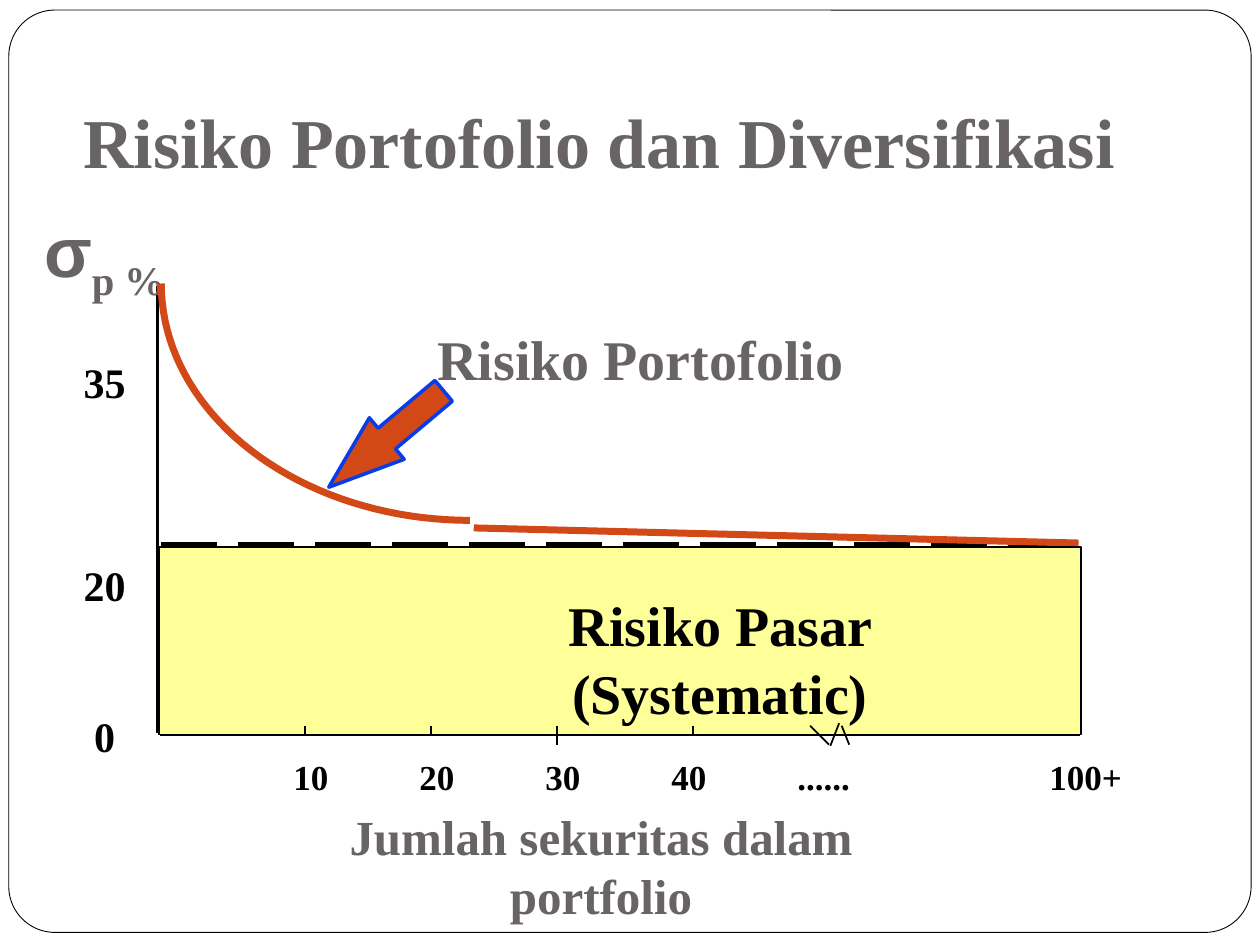
"""Build a slide on portfolio risk and diversification."""
import math

import pptx
import pptx.dml.color
import pptx.enum.dml
import pptx.enum.shapes
import pptx.enum.text
import pptx.oxml.ns
import pptx.util
from lxml import etree

Inches = pptx.util.Inches
Pt = pptx.util.Pt
RGB = pptx.dml.color.RGBColor.from_string
SHAPE = pptx.enum.shapes.MSO_SHAPE
ALIGN = pptx.enum.text.PP_ALIGN
qn = pptx.oxml.ns.qn


class Theme:
    black = RGB("000000")
    white = RGB("FFFFFF")
    gray = RGB("696464")
    orange = RGB("D34817")
    blue = RGB("063DE8")
    yellow = RGB("FFFF99")
    serif = "Times New Roman"
    sans = "Arial"
    title, heading, caption, scale, ticks = 40, 32, 28, 24, 20


def add_text(text, x, y, w, h, size, color=Theme.black, font=Theme.serif,
             align=ALIGN.CENTER, wrap=True):
    tf = s.shapes.add_textbox(Inches(x), Inches(y), Inches(w), Inches(h)).text_frame
    tf.word_wrap = wrap
    p = tf.paragraphs[0]
    p.alignment = align
    r = p.add_run()
    r.text = text
    r.font.name, r.font.size, r.font.bold = font, Pt(size), True
    r.font.color.rgb = color
    return p


def add_line(x1, y1, x2, y2, width, color=Theme.black):
    sp = s.shapes.add_connector(pptx.enum.shapes.MSO_CONNECTOR.STRAIGHT,
                                Inches(x1), Inches(y1), Inches(x2), Inches(y2))
    sp.line.color.rgb = color
    sp.line.width = Pt(width)
    etree.SubElement(sp._element.spPr, qn("a:effectLst"))
    return sp


prs = pptx.Presentation()
prs.slide_width, prs.slide_height = Inches(10), Inches(7.5)
s = prs.slides.add_slide(prs.slide_layouts[6])

frame = s.shapes.add_shape(SHAPE.ROUNDED_RECTANGLE, Inches(0.07), Inches(0.08),
                           Inches(9.86), Inches(7.32))
frame.adjustments[0] = 0.05
frame.shadow.inherit = False
frame.fill.solid()
frame.fill.fore_color.rgb = Theme.white
frame.line.color.rgb = Theme.black
frame.line.width = Pt(0.5)

add_text("Risiko Portofolio dan Diversifikasi", 0.56, 0.73, 8.39, 0.77,
         Theme.title, Theme.gray, wrap=False)

add_line(1.25, 2.27, 1.25, 5.82, 2)
add_line(1.27, 5.83, 8.57, 5.83, 2)
market_level = add_line(1.28, 4.33, 8.56, 4.33, 4)
market_level.line.dash_style = pptx.enum.dml.MSO_LINE.LONG_DASH

p = add_text("σ", 0.23, 1.6, 1.2, 0.77, Theme.title, Theme.gray, Theme.sans, wrap=False)
r = p.add_run()
r.text = "p %"
r.font.name, r.font.size, r.font.bold = Theme.serif, Pt(Theme.title), True
r.font.color.rgb = Theme.gray
r.font._element.set("baseline", "-25000")
for label, middle in (("35", 3.02), ("20", 4.63), ("0", 5.83)):
    add_text(label, 0.23, middle - 0.24, 1.2, 0.48, Theme.scale, wrap=False)

right, top, rx, ry, steps = 3.73, 2.25, 2.45, 1.88, 40
points = []
for i in range(steps + 1):
    angle = math.pi / 2 * i / steps
    points.append((Inches(right - rx * math.cos(angle)),
                   Inches(top + ry * math.sin(angle))))
builder = s.shapes.build_freeform(*points[0])
builder.add_line_segments(points[1:], close=False)
curve = builder.convert_to_shape()
curve.shadow.inherit = False
curve.fill.background()
curve.line.color.rgb = Theme.orange
curve.line.width = Pt(4)
add_line(3.76, 4.19, 8.56, 4.31, 4, Theme.orange)

add_text("Jumlah sekuritas dalam portfolio", 2.02, 6.35, 5.5, 1.03,
         Theme.caption, Theme.gray)
p = add_text("10\t20\t30\t40\t......\t100+", 2.23, 5.95, 6.82, 0.43,
             Theme.ticks, align=ALIGN.LEFT, wrap=False)
tabs = etree.SubElement(p._p.get_or_add_pPr(), qn("a:tabLst"))
for stop in (1, 2, 3, 4, 6):
    etree.SubElement(tabs, qn("a:tab"), pos=str(Inches(stop)), algn="l")
add_text("Risiko Portofolio", 2.42, 2.53, 5.33, 0.64, Theme.heading, Theme.gray)

arrow = s.shapes.add_shape(SHAPE.LEFT_ARROW, Inches(2.47), Inches(3.27),
                           Inches(1.19), Inches(0.43))
arrow.adjustments[0], arrow.adjustments[1] = 0.5, 1.4
arrow.rotation = 320
arrow.shadow.inherit = False
arrow.fill.solid()
arrow.fill.fore_color.rgb = Theme.orange
arrow.line.color.rgb = Theme.blue
arrow.line.width = Pt(2)

market = s.shapes.add_shape(SHAPE.RECTANGLE, Inches(1.26), Inches(4.34),
                            Inches(7.32), Inches(1.49))
market.shadow.inherit = False
market.fill.solid()
market.fill.fore_color.rgb = Theme.yellow
market.line.color.rgb = Theme.black
market.line.width = Pt(1)
add_text("Risiko Pasar (Systematic)", 3.24, 4.64, 4.95, 1.17, Theme.heading)

for x, bottom in ((2.42, 5.83), (3.42, 5.83), (4.42, 5.91), (5.5, 5.83)):
    add_line(x, 5.76, x, bottom, 1)
for x1, y1, x2, y2 in ((6.43, 5.76, 6.58, 5.91), (6.59, 5.92, 6.66, 5.74),
                       (6.68, 5.76, 6.74, 5.91)):
    add_line(x1, y1, x2, y2, 1)

prs.save("out.pptx")
